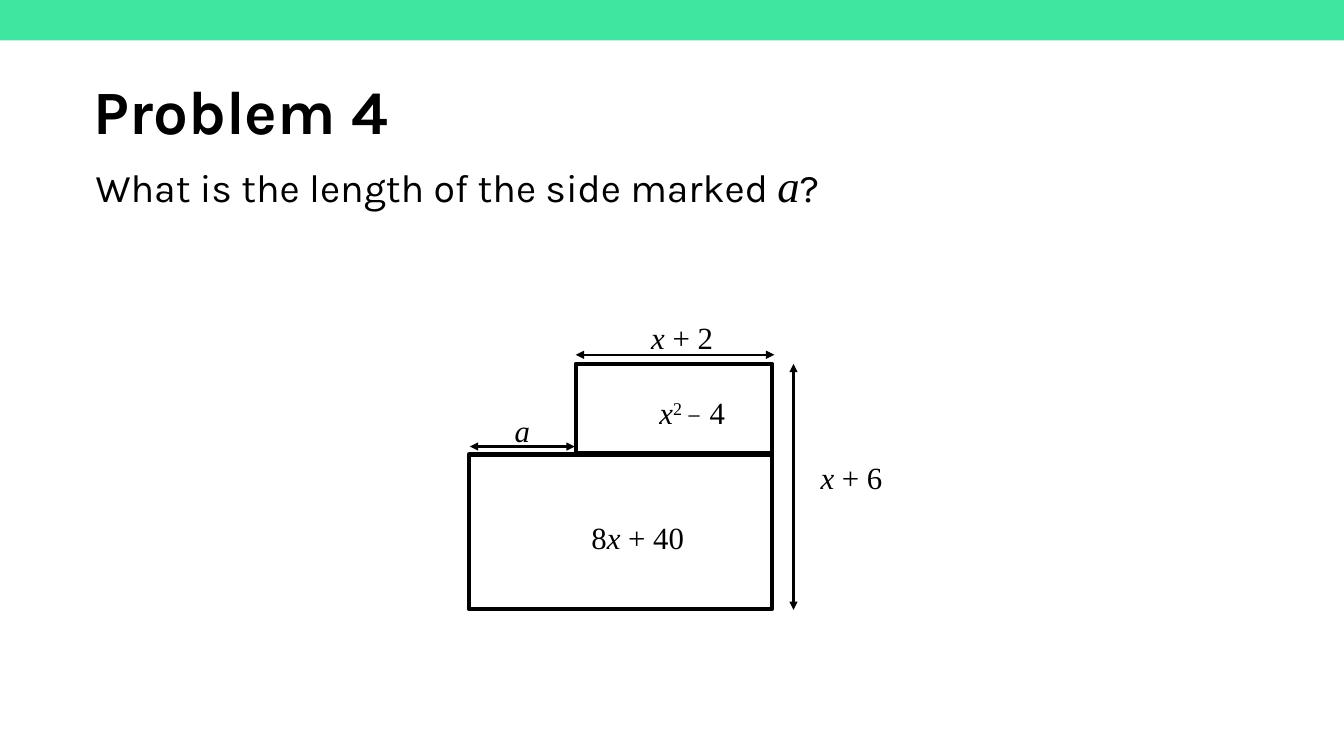
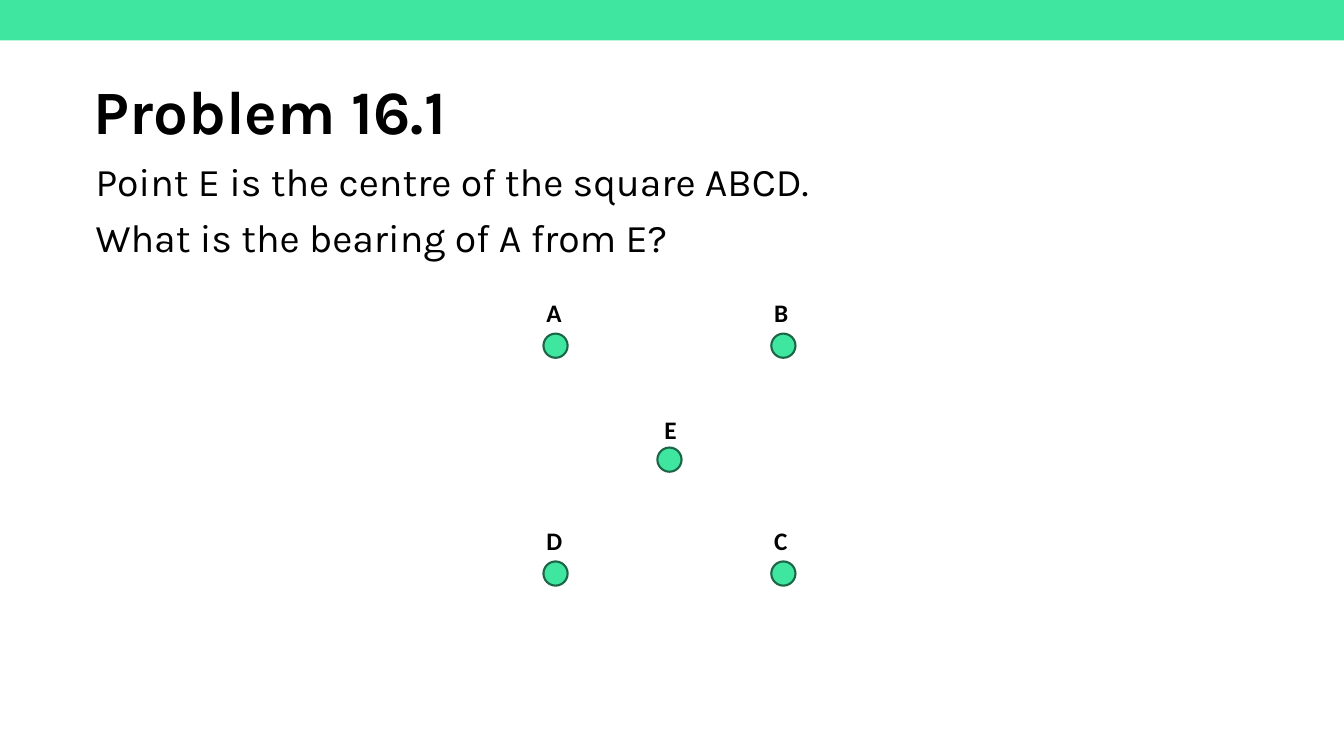
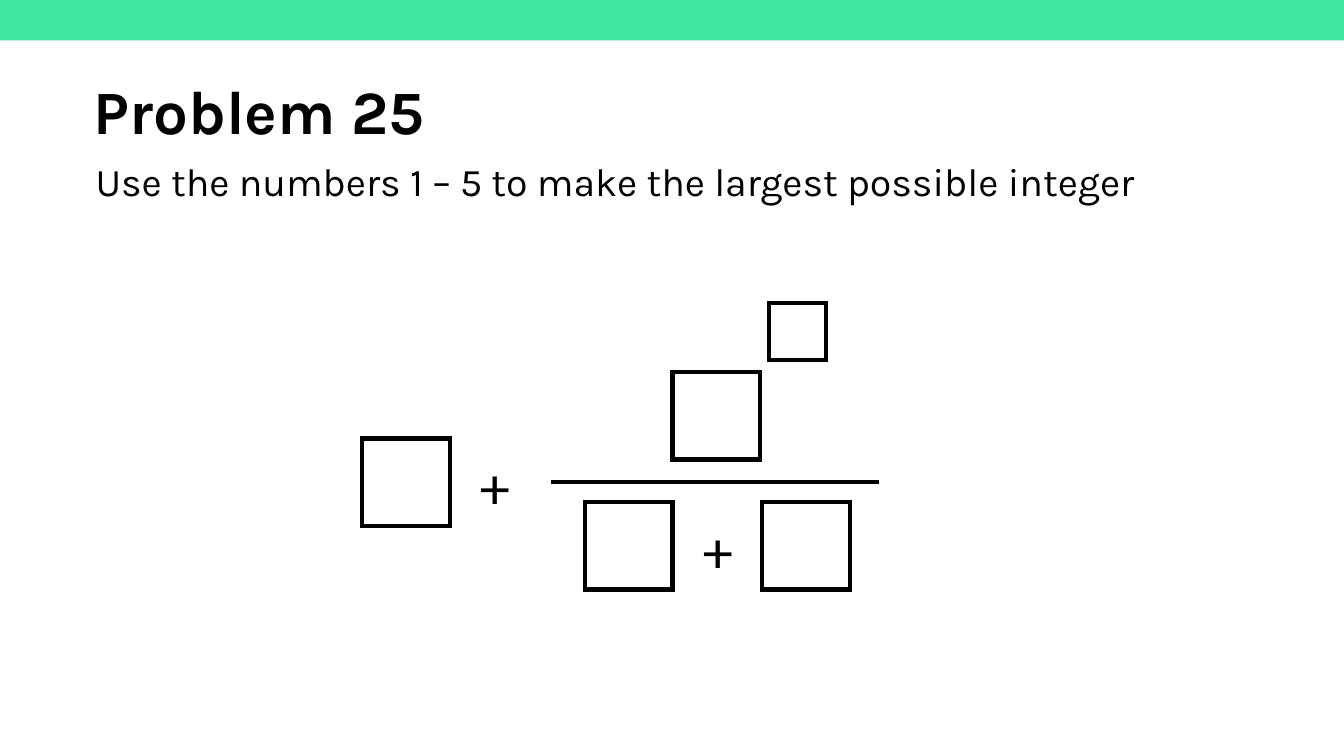
from lxml import etree
from pptx import Presentation
from pptx.dml.color import RGBColor
from pptx.enum.shapes import MSO_CONNECTOR, MSO_SHAPE
from pptx.enum.text import MSO_ANCHOR, PP_ALIGN
from pptx.oxml.ns import qn
from pptx.util import Inches, Pt

GREEN = RGBColor(0x3F, 0xE6, 0xA0)
DARK_GREEN = RGBColor(0x1C, 0x65, 0x46)
BLACK = RGBColor(0, 0, 0)
WHITE = RGBColor(255, 255, 255)
GREY = RGBColor(0x22, 0x22, 0x22)

RECTANGLE, ELLIPSE = MSO_SHAPE.RECTANGLE, MSO_SHAPE.OVAL
STRAIGHT = MSO_CONNECTOR.STRAIGHT
LEFT, CENTER = PP_ALIGN.LEFT, PP_ALIGN.CENTER
TOP, MIDDLE = MSO_ANCHOR.TOP, MSO_ANCHOR.MIDDLE

SLIDE_WIDTH, SLIDE_HEIGHT = 13.33, 7.5
HEADING_FONT, MATH_FONT, LABEL_FONT = "Karla", "Times New Roman", "Calibri"
X = ("x", {"italic": True})
X_SPACED = ("x ", {"italic": True})


def add_run(paragraph, text, font, size, color=BLACK, bold=False,
            italic=False, superscript=False):
    run = paragraph.add_run()
    run.text = text
    run.font.name = font
    run.font.size = Pt(size)
    run.font.color.rgb = color
    run.font.bold = bold
    run.font.italic = italic
    if superscript:
        run.font._element.set("baseline", "30000")


def add_text(slide, left, top, width, height, paragraphs, align=LEFT,
             anchor=TOP, inset=None, line_spacing=1.0, space_before=0,
             space_after=0, **run_format):
    """Each paragraph is a list of strings or (string, format changes) pairs."""
    box = slide.shapes.add_textbox(
        Inches(left), Inches(top), Inches(width), Inches(height))
    frame = box.text_frame
    frame.word_wrap = True
    frame.vertical_anchor = anchor
    if inset is not None:
        frame.margin_left = frame.margin_right = Inches(inset)
        frame.margin_top = frame.margin_bottom = Inches(inset)
    for index, runs in enumerate(paragraphs):
        paragraph = frame.add_paragraph() if index else frame.paragraphs[0]
        paragraph.alignment = align
        paragraph.line_spacing = line_spacing
        paragraph.space_before = Pt(space_before if index else 0)
        paragraph.space_after = Pt(space_after)
        for run in runs:
            text, changes = (run, {}) if isinstance(run, str) else run
            add_run(paragraph, text, **{**run_format, **changes})


def add_box(slide, kind, left, top, width, height, fill=None, line=None,
            line_width=3, mitred=False):
    shape = slide.shapes.add_shape(
        kind, Inches(left), Inches(top), Inches(width), Inches(height))
    shape.shadow.inherit = False
    if fill is None:
        shape.fill.background()
    else:
        shape.fill.solid()
        shape.fill.fore_color.rgb = fill
    if line is None:
        shape.line.fill.background()
    else:
        shape.line.color.rgb = line
        shape.line.width = Pt(line_width)
        if mitred:
            outline = shape.line._get_or_add_ln()
            etree.SubElement(outline, qn("a:miter")).set("lim", "800000")


def add_line(slide, start, end, width, arrows=False):
    connector = slide.shapes.add_connector(
        STRAIGHT, *(Inches(value) for value in (*start, *end)))
    connector.line.color.rgb = BLACK
    connector.line.width = Pt(width)
    if arrows:
        outline = connector.line._get_or_add_ln()
        for tag in ("a:headEnd", "a:tailEnd"):
            etree.SubElement(outline, qn(tag)).set("type", "triangle")
    etree.SubElement(connector._element.spPr, qn("a:effectLst"))


def add_problem(presentation, title, question, top=1.56, height=0.75):
    """New slide with the shared band, title and question."""
    slide = presentation.slides.add_slide(presentation.slide_layouts[6])
    add_box(slide, RECTANGLE, 0, -0.02, SLIDE_WIDTH, 0.42, fill=GREEN)
    add_text(slide, 0.83, 0.41, 11.5, 1.45, [[title]], anchor=MIDDLE,
             line_spacing=0.9, font=HEADING_FONT, size=44, bold=True)
    add_text(slide, 0.85, top, 11.5, height, question, line_spacing=0.9,
             space_before=10, font=HEADING_FONT, size=28)
    return slide


def add_expression(slide, left, top, runs, width=1.15):
    add_text(slide, left, top, width, 0.37, [runs], align=CENTER, inset=0,
             line_spacing=1.15, space_after=10, font=MATH_FONT, size=22)


def add_point(slide, name, left, top, label_left, label_rise):
    add_box(slide, ELLIPSE, left, top, 0.24, 0.24, fill=GREEN,
            line=DARK_GREEN, line_width=1.5)
    add_text(slide, left + label_left, top - label_rise, 0.4, 0.4, [[name]],
             font=LABEL_FONT, size=18, bold=True)


def build_side_length(presentation):
    side = ("a", {"font": MATH_FONT, "size": 32, "italic": True})
    slide = add_problem(presentation, "Problem 4",
                        [["What is the length of the side marked ", side, "?"]],
                        top=1.58, height=5.12)
    # Upper and lower rectangles
    add_box(slide, RECTANGLE, 5.71, 3.61, 1.95, 0.89, line=BLACK)
    add_box(slide, RECTANGLE, 4.65, 4.51, 3.01, 1.53, line=BLACK)
    # Dimension arrows
    for start, end in (((4.66, 4.43), (5.7, 4.43)),
                       ((5.71, 3.52), (7.68, 3.52)),
                       ((7.87, 3.61), (7.87, 6.05))):
        add_line(slide, start, end, 1.5, arrows=True)
    # Lengths and areas
    minus = ("−", {"font": "Cambria", "size": 20, "color": GREY})
    add_expression(slide, 5.02, 4.03, [("a", {"italic": True})], width=0.32)
    add_expression(slide, 6.19, 3.11, [X_SPACED, "+ 2"])
    add_expression(slide, 7.87, 4.5, [X_SPACED, "+ 6"])
    add_expression(slide, 5.75, 5.09, ["8", X_SPACED, "+ 40"])
    add_expression(slide, 6.29, 3.85,
                   [X, ("2 ", {"superscript": True}), minus, " 4"])


def build_bearing(presentation):
    slide = add_problem(presentation, "Problem 16.1",
                        [["Point E is the centre of the square ABCD."],
                         ["What is the bearing of A from E?"]])
    # Corners of the square, then its centre
    left, top, side = 5.39, 3.31, 2.26
    for name, column, row in (("A", 0, 0), ("B", 1, 0),
                              ("D", 0, 1), ("C", 1, 1)):
        add_point(slide, name, left + column * side, top + row * side,
                  -0.07, 0.41)
    add_point(slide, "E", left + side / 2, top + side / 2, -0.03, 0.38)


def build_largest_integer(presentation):
    slide = add_problem(
        presentation, "Problem 25",
        [["Use the numbers 1 – 5 to make the largest possible integer"]])
    large, small = 0.87, 0.56
    # Number boxes: first term, numerator, exponent, denominator
    for left, top, size in ((3.59, 4.35, large), (6.67, 3.69, large),
                            (7.63, 3.01, small), (5.8, 4.98, large),
                            (7.56, 4.98, large)):
        add_box(slide, RECTANGLE, left, top, size, size, fill=WHITE,
                line=BLACK, mitred=True)
    # Fraction bar and plus signs
    add_line(slide, (5.47, 4.78), (8.72, 4.78), 3)
    for left, top in ((4.48, 4.35), (6.69, 4.98)):
        add_text(slide, left, top, large, large, [["+"]], align=CENTER,
                 anchor=MIDDLE, font=HEADING_FONT, size=40)


def main():
    presentation = Presentation()
    presentation.slide_width = Inches(SLIDE_WIDTH)
    presentation.slide_height = Inches(SLIDE_HEIGHT)
    build_side_length(presentation)
    build_bearing(presentation)
    build_largest_integer(presentation)
    presentation.save("out.pptx")


if __name__ == "__main__":
    main()
